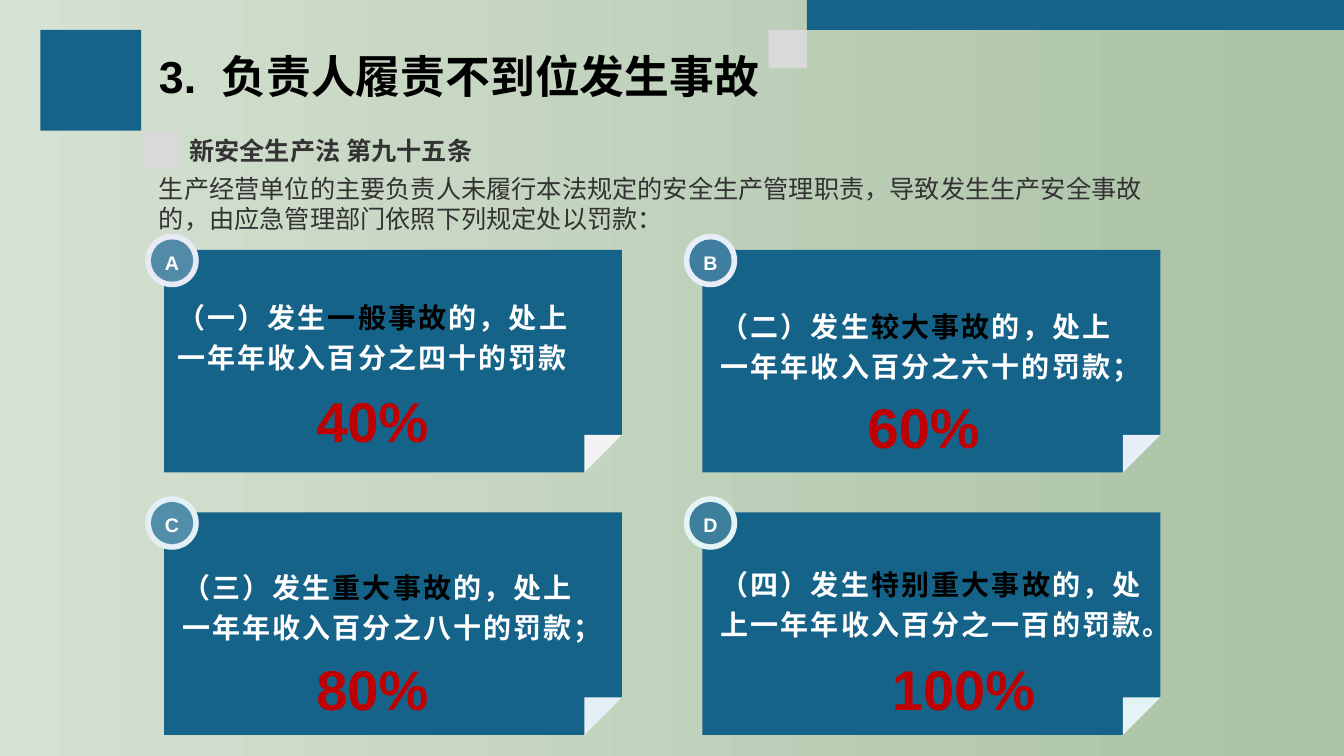
from lxml.etree import SubElement
from pptx import Presentation
from pptx.dml.color import RGBColor
from pptx.enum.shapes import MSO_SHAPE
from pptx.enum.text import MSO_ANCHOR, MSO_AUTO_SIZE, PP_ALIGN
from pptx.oxml.ns import qn
from pptx.util import Pt

BLUE = RGBColor(0x15, 0x63, 0x89)
GREY = RGBColor(0xD9, 0xD9, 0xD9)
BLACK = RGBColor(0, 0, 0)
DARK = RGBColor(0x33, 0x33, 0x33)
WHITE = RGBColor(0xFF, 0xFF, 0xFF)
RED = RGBColor(0xC0, 0, 0)
SMOKE = RGBColor(0xF2, 0xF2, 0xF2)
LILAC = RGBColor(0xE7, 0xE9, 0xF4)
MIST = RGBColor(0xE8, 0xEE, 0xF8)
ICE = RGBColor(0xE4, 0xF0, 0xF6)
MINT = RGBColor(0xE4, 0xF3, 0xF4)
PALE = RGBColor(0xD5, 0xE1, 0xD2)
SAGE = RGBColor(0xAA, 0xC2, 0xA5)

LATIN = "Arial"
HAN = "Noto Sans CJK SC"
GROW = {"auto_size": MSO_AUTO_SIZE.SHAPE_TO_FIT_TEXT}
MIDDLE = {"vertical_anchor": MSO_ANCHOR.MIDDLE}
LOOSE = {"line_spacing": 1.2}
CENTRE = {"line_spacing": 1.2, "alignment": PP_ALIGN.CENTER}


def apply(target, values):
    for name, value in values.items():
        setattr(target, name, value)


class Painter:
    def __init__(self, slide):
        self.slide = slide

    def backdrop(self, *colors):
        fill = self.slide.background.fill
        fill.gradient()
        fill.gradient_angle = 0
        for place, (stop, color) in enumerate(zip(fill.gradient_stops, colors)):
            stop.position = place
            stop.color.rgb = color

    def shape(self, kind, box, color, turn=0, adjust=None, flip=False, alpha=None):
        item = self.slide.shapes.add_shape(kind, *map(Pt, box))
        item.shadow.inherit = False
        item.fill.solid()
        item.fill.fore_color.rgb = color
        item.line.fill.background()
        item.rotation = turn
        if adjust is not None:
            item.adjustments[0] = adjust
        if flip:
            item._element.spPr.find(qn("a:xfrm")).set("flipV", "1")
        if alpha:
            tone = item._element.spPr.find(qn("a:solidFill"))[0]
            SubElement(tone, qn("a:alpha")).set("val", str(alpha * 1000))

    def text(self, box, parts, size, bold=True, face=LATIN, frame=None, para=None, wrap=True):
        item = self.slide.shapes.add_textbox(*map(Pt, box))
        item.text_frame.word_wrap = wrap
        apply(item.text_frame, frame or {})
        line = item.text_frame.paragraphs[0]
        apply(line, para or {})
        for words, color, space in parts:
            run = line.add_run()
            run.text = words
            apply(run.font, {"size": Pt(size), "bold": bold, "name": face})
            run.font.color.rgb = color
            style = run._r.get_or_add_rPr()
            SubElement(style, qn("a:ea")).set("typeface", HAN)
            if space:
                style.set("spc", str(int(space * 100)))

    def badge(self, left, top, letter, ring, alpha):
        self.shape(MSO_SHAPE.OVAL, (left, top, 38.2, 38.2), ring)
        self.shape(MSO_SHAPE.OVAL, (left + 4, top + 4, 30.2, 30.2), BLUE, alpha=alpha)
        self.text((left + 6.8, top + 5.8, 24.6, 26), [(letter, WHITE, 0)], 14,
                  frame=MIDDLE, para=CENTRE, wrap=False)

    def card(self, left, top, fold):
        self.shape(MSO_SHAPE.SNIP_1_RECTANGLE, (left, top, 327, 159), BLUE,
                   adjust=0.17, flip=True)
        self.shape(MSO_SHAPE.ISOSCELES_TRIANGLE, (left + 300.2, top + 132.2, 26.8, 26.8),
                   fold, turn=90, adjust=0)


CARDS = [
    ("A", SMOKE, LILAC, "（一）发生", "一般事故", "的，处上一年年收入百分之四十的罚款",
     (119.5, 206, 297.4, 80.6), "40%", (218.9, 272.9, 104.4, 55.4)),
    ("B", MIST, MIST, "（二）发生", "较大事故", "的，处上一年年收入百分之六十的罚款；",
     (507.6, 212.4, 297.4, 80.6), "60%", (612.7, 276.5, 104.4, 55.4)),
    ("C", ICE, ICE, "（三）发生", "重大事故", "的，处上一年年收入百分之八十的罚款；",
     (123, 398.9, 297.4, 80.6), "80%", (218.9, 463.7, 104.4, 55.4)),
    ("D", MINT, MINT, "（四）发生", "特别重大事故", "的，处上一年年收入百分之一百的罚款。",
     (507.6, 396.7, 321.1, 80.6), "100%", (630, 463.7, 144.7, 55.4)),
]


def main():
    deck = Presentation()
    apply(deck, {"slide_width": Pt(960), "slide_height": Pt(540)})
    paint = Painter(deck.slides.add_slide(deck.slide_layouts[6]))
    paint.backdrop(PALE, SAGE)

    for box, color in [
        ((28.8, 21.3, 72, 72), BLUE),
        ((100.8, 93.3, 27.4, 27.4), GREY),
        ((576.4, 0, 383.6, 21.3), BLUE),
        ((549, 21.3, 27.4, 27.4), GREY),
    ]:
        paint.shape(MSO_SHAPE.RECTANGLE, box, color)

    paint.text((106.4, 31, 510.5, 46),
               [("3.", BLACK, 0), (" ", BLACK, 9), ("负责人履责不到位发生事故", BLACK, 0)],
               32, frame=GROW)
    paint.text((128.2, 92.9, 319, 29), [("新安全生产法 第九十五条", DARK, 0)],
               18, face=HAN, frame=GROW)
    paint.text((106.4, 120.2, 722.2, 51),
               [("生产经营单位的主要负责人未履行本法规定的安全生产管理职责，"
                 "导致发生生产安全事故的，由应急管理部门依照下列规定处以罚款：", DARK, 0)],
               18, bold=False, face=HAN, frame=GROW)

    for index, (letter, fold, ring, start, event, rest, area, rate, spot) in enumerate(CARDS):
        row, col = divmod(index, 2)
        left, top = 117.2 + col * 384.6, 178.5 + row * 187.5
        paint.card(left, top, fold)
        paint.badge(left - 13.4, top - 11.5, letter, ring, 70 + 10 * col)
        paint.text(area, [(start, WHITE, 1.5), (event, BLACK, 1.5), (rest, WHITE, 1.5)],
                   20, para=LOOSE)
        paint.text(spot, [(rate, RED, 0)], 40, frame=GROW)

    deck.save("out.pptx")


if __name__ == "__main__":
    main()
